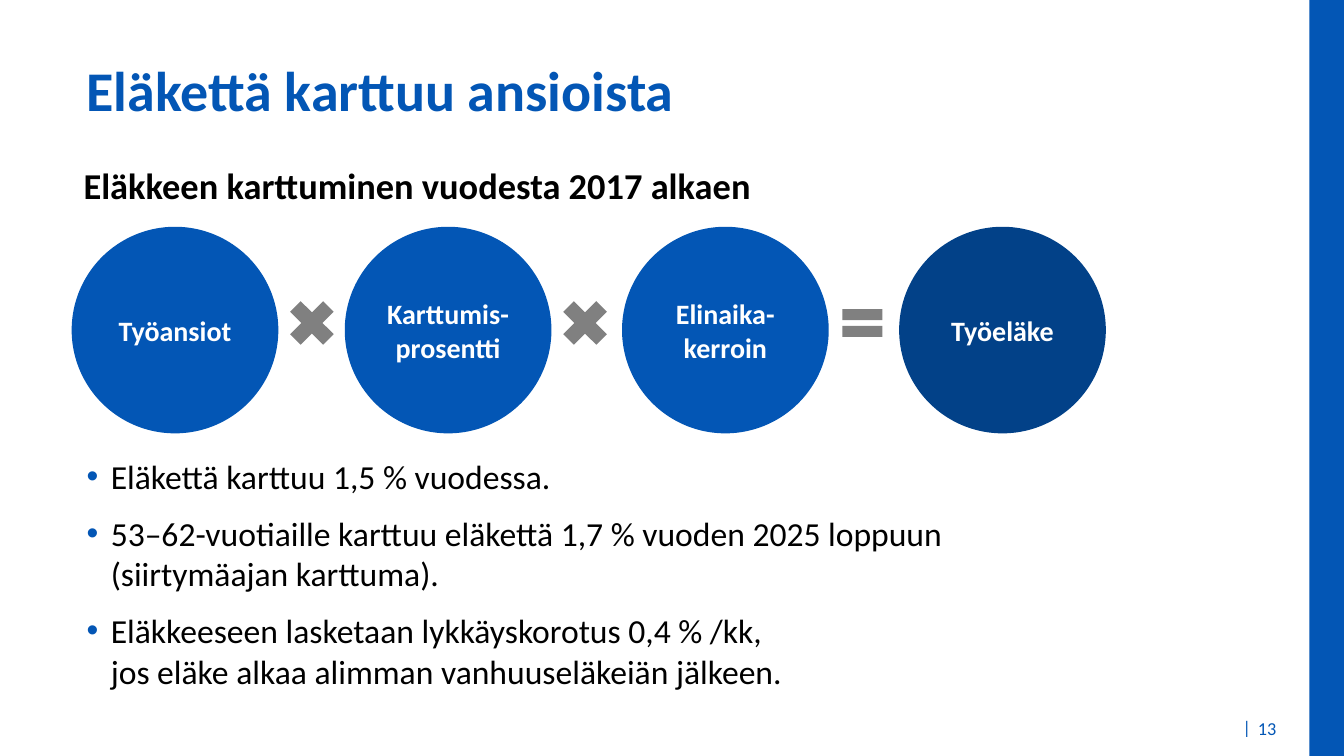
from dataclasses import dataclass

from lxml import etree
from pptx import Presentation, util as u
from pptx.dml import color
from pptx.enum import shapes, text
from pptx.oxml import ns


@dataclass(frozen=True)
class Theme:
    font: str = "Calibri"
    blue: str = "0356B5"
    navy: str = "024188"
    gray: str = "808080"
    white: str = "FFFFFF"
    black: str = "000000"
    title: int = 40
    subtitle: int = 26
    body: int = 24
    circle: int = 20
    footer: int = 13


class SlideBuilder:
    """Draws on one slide; boxes are (left, top, width, height) in percent of the slide."""

    def __init__(self, presentation, theme):
        self.width, self.height = presentation.slide_width, presentation.slide_height
        self.theme = theme
        self.slide = presentation.slides.add_slide(presentation.slide_layouts[5])

    def place(self, box):
        left, top, width, height = box
        return (round(left * self.width / 100), round(top * self.height / 100),
                round(width * self.width / 100), round(height * self.height / 100))

    def set_text(self, shape, content, size, ink, bold=False, align=text.PP_ALIGN.LEFT,
                 anchor=text.MSO_ANCHOR.TOP, wrap=True):
        frame = shape.text_frame
        frame.text = content
        frame.word_wrap = wrap
        frame.auto_size = text.MSO_AUTO_SIZE.NONE
        frame.vertical_anchor = anchor
        for paragraph in frame.paragraphs:
            paragraph.alignment = align
            for run in paragraph.runs:
                run.font.name = self.theme.font
                run.font.size = u.Pt(size)
                run.font.bold = bold
                run.font.color.rgb = color.RGBColor.from_string(ink)
        return frame

    def title(self, box, content):
        shape = self.slide.shapes.title
        shape.left, shape.top, shape.width, shape.height = self.place(box)
        self.set_text(shape, content, self.theme.title, self.theme.blue, bold=True)

    def label(self, box, content, size, ink, **style):
        shape = self.slide.shapes.add_textbox(*self.place(box))
        return self.set_text(shape, content, size, ink, **style)

    def bullets(self, box, items):
        frame = self.label(box, "\n".join(items), self.theme.body, self.theme.black)
        for paragraph in frame.paragraphs:
            paragraph.space_after = u.Pt(12)
            properties = paragraph._p.get_or_add_pPr()
            properties.set("marL", str(u.Inches(0.24)))
            properties.set("indent", str(-u.Inches(0.24)))
            bullet_color = etree.SubElement(properties, ns.qn("a:buClr"))
            etree.SubElement(bullet_color, ns.qn("a:srgbClr"), val=self.theme.blue)
            etree.SubElement(properties, ns.qn("a:buFont"), typeface="Arial")
            etree.SubElement(properties, ns.qn("a:buChar"), char="•")

    def shape(self, kind, box, fill):
        shape = self.slide.shapes.add_shape(kind, *self.place(box))
        shape.shadow.inherit = False
        shape.fill.solid()
        shape.fill.fore_color.rgb = color.RGBColor.from_string(fill)
        shape.line.fill.background()
        return shape

    def circle(self, left, content, fill):
        shape = self.shape(shapes.MSO_SHAPE.OVAL, (left, 30, 15.38, 27.33), fill)
        frame = self.set_text(shape, content, self.theme.circle, self.theme.white, bold=True,
                              align=text.PP_ALIGN.CENTER, anchor=text.MSO_ANCHOR.MIDDLE)
        frame.margin_left = frame.margin_right = 0

    def operator(self, circle_left, kind, width, height):
        """Centre the sign in the gap after the circle that starts at circle_left."""
        center, middle = circle_left + 17.88, 42.73
        box = (center - width / 2, middle - height / 2, width, height)
        self.shape(kind, box, self.theme.gray)


def main():
    presentation = Presentation()
    presentation.slide_width, presentation.slide_height = u.Inches(13.33), u.Inches(7.5)
    theme = Theme()
    builder = SlideBuilder(presentation, theme)

    builder.shape(shapes.MSO_SHAPE.RECTANGLE, (97.43, 0, 2.57, 100), theme.blue)
    builder.label((91.73, 94.13, 2.18, 4.67), "|", theme.footer, theme.blue, wrap=False)
    builder.label((92.85, 94, 3.3, 4.67), "13", theme.footer, theme.blue,
                  anchor=text.MSO_ANCHOR.MIDDLE)
    builder.title((5.7, 6.67, 78.23, 12), "Eläkettä karttuu ansioista")
    builder.label((5.48, 20.93, 78.23, 9.07), "Eläkkeen karttuminen vuodesta 2017 alkaen",
                  theme.subtitle, theme.black, bold=True)

    times = (shapes.MSO_SHAPE.MATH_MULTIPLY, 4.73, 8.4)
    equals = (shapes.MSO_SHAPE.MATH_EQUAL, 4.05, 6.27)
    formula = [
        (5.33, "Työansiot", theme.blue, times),
        (25.65, "Karttumis-\vprosentti", theme.blue, times),
        (46.28, "Elinaika-\nkerroin", theme.blue, equals),
        (66.9, "Työeläke", theme.navy, None),
    ]
    for left, content, fill, sign in formula:
        builder.circle(left, content, fill)
        if sign:
            builder.operator(left, *sign)

    builder.bullets((5.7, 59.6, 78.23, 34.4), [
        "Eläkettä karttuu 1,5 % vuodessa.",
        "53–62-vuotiaille karttuu eläkettä 1,7 % vuoden 2025 loppuun\v(siirtymäajan karttuma).",
        "Eläkkeeseen lasketaan lykkäyskorotus 0,4 % /kk,\vjos eläke alkaa alimman vanhuuseläkeiän jälkeen.",
    ])
    presentation.save("out.pptx")


if __name__ == "__main__":
    main()
